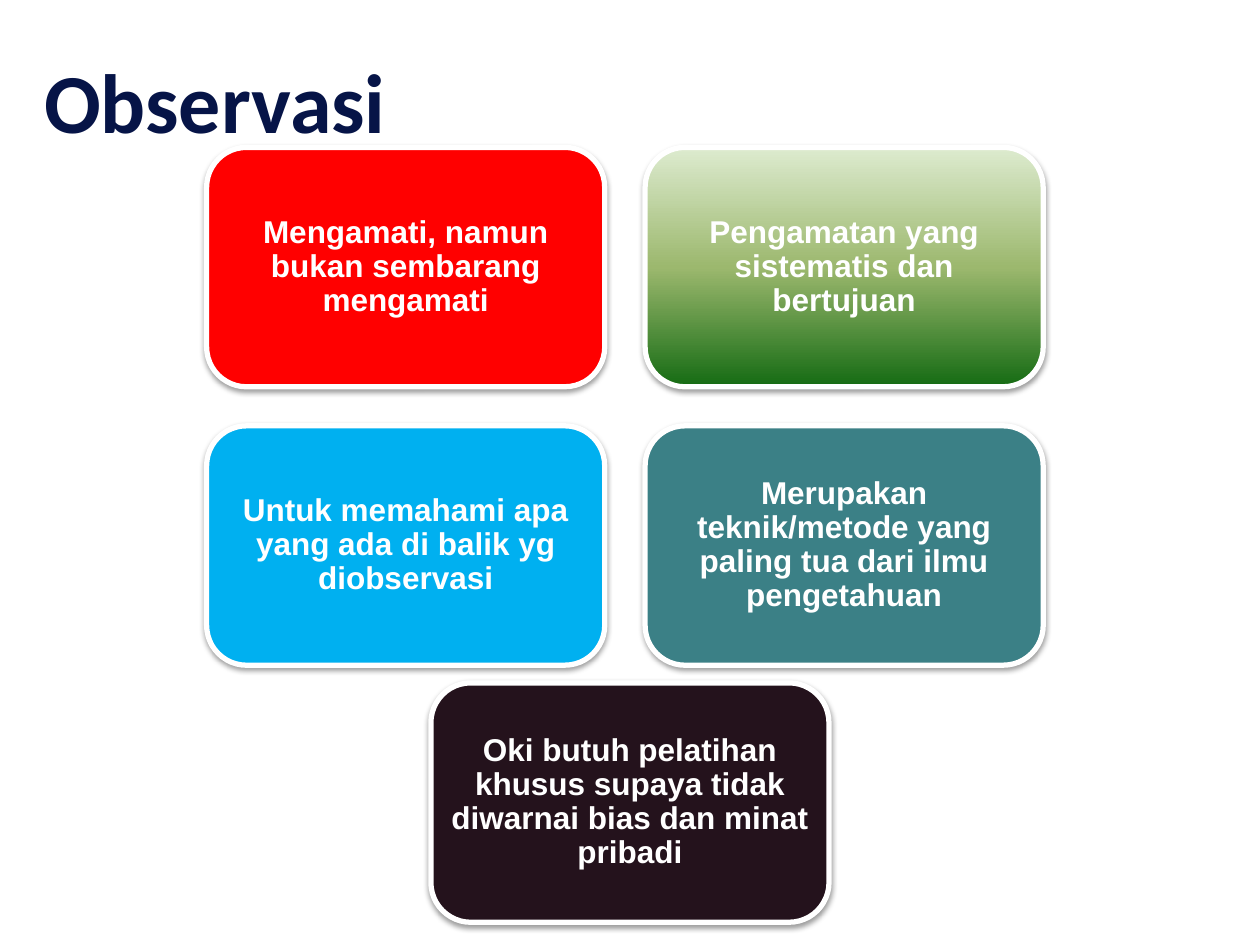
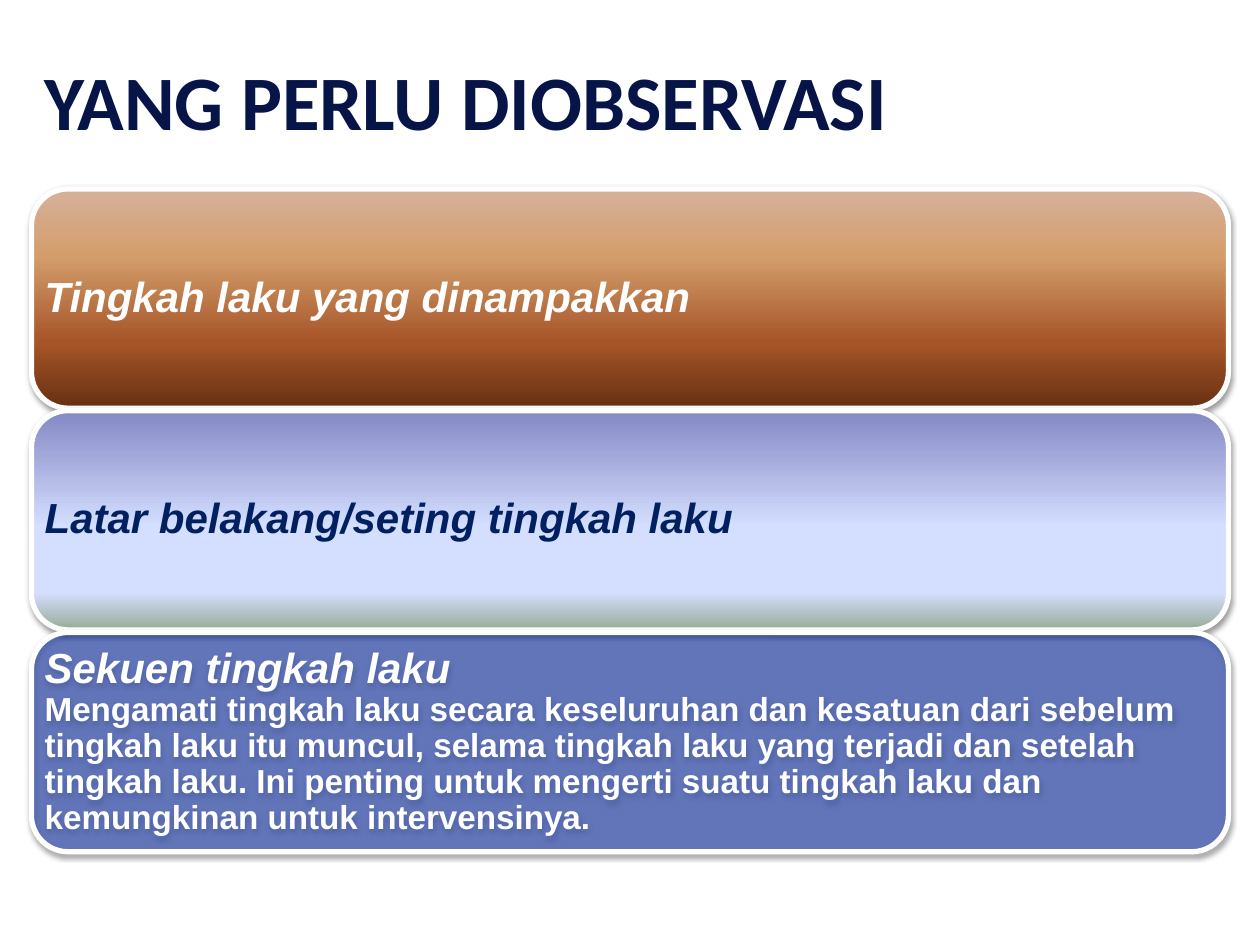
from lxml.etree import SubElement
from pptx import Presentation
from pptx.dml.color import RGBColor
from pptx.enum.shapes import MSO_SHAPE as SHAPE
from pptx.enum.text import MSO_ANCHOR as ANCHOR, MSO_AUTO_SIZE as AUTO, PP_ALIGN as ALIGN
from pptx.oxml.ns import qn
from pptx.util import Inches, Pt

C = {
    "navy": "061447", "white": "FFFFFF", "ink": "002060", "black": "000000",
    "red": "FF0000", "sky": "00B0F0", "teal": "3B8086", "plum": "24121C", "blue": "0E30AB",
}
GRADIENTS = {
    "green": [(0, "DDEBCF"), (50, "9CB86E"), (100, "156B13")],
    "copper": [(0, "D6B19C"), (30, "D49E6C"), (70, "A65528"), (100, "663012")],
    "mist": [(0, "8488C4"), (53, "D4DEFF"), (83, "D4DEFF"), (100, "96AB94")],
}
OPACITY = {"blue": 55}
TITLE = {"name": "Calibri", "bold": True}
LABEL = {"name": "Arial", "size": Pt(18), "bold": True}
HEADING = {"name": "Arial", "size": Pt(24), "bold": True, "italic": True}
DETAIL = {"name": "Arial", "size": Pt(19), "bold": True, "italic": False}


def add_run(p, text, font, color):
    r = p.add_run()
    r.text = text
    for key, value in font.items():
        setattr(r.font, key, value)
    r.font.color.rgb = RGBColor.from_string(C[color])


def add_card(s, box, fill, inset, align):
    sp = s.shapes.add_shape(SHAPE.ROUNDED_RECTANGLE, *map(Inches, box))
    sp.line.color.rgb = RGBColor.from_string(C["white"])
    sp.line.width = Pt(3)
    if fill in GRADIENTS:
        sp.fill.gradient()
        sp.fill.gradient_angle = 270
        stops = sp._element.spPr.find(".//" + qn("a:gsLst"))
        stops.clear()
        for pos, color in GRADIENTS[fill]:
            gs = SubElement(stops, qn("a:gs"), pos=str(pos * 1000))
            SubElement(gs, qn("a:srgbClr"), val=color)
    else:
        sp.fill.solid()
        sp.fill.fore_color.rgb = RGBColor.from_string(C[fill])
        if fill in OPACITY:
            clr = sp._element.spPr.find(qn("a:solidFill"))[0]
            SubElement(clr, qn("a:alpha"), val=str(OPACITY[fill] * 1000))
    sp.shadow.inherit = False
    effects = sp._element.spPr.find(qn("a:effectLst"))
    shadow = SubElement(effects, qn("a:outerShdw"), blurRad=str(Pt(3.1)), dist=str(Pt(1.6)),
                        dir="5400000", rotWithShape="0")
    clr = SubElement(shadow, qn("a:srgbClr"), val=C["black"])
    SubElement(clr, qn("a:alpha"), val="38000")
    tf = sp.text_frame
    tf.word_wrap = True
    tf.vertical_anchor = ANCHOR.MIDDLE
    for side in ("left", "right", "top", "bottom"):
        setattr(tf, f"margin_{side}", Inches(inset))
    p = tf.paragraphs[0]
    p.alignment = align
    p.line_spacing = 0.9
    return p


prs = Presentation()
prs.slide_width, prs.slide_height = Inches(10), Inches(7.5)

slides = []
for text, size in [("Observasi", 48), ("YANG PERLU DIOBSERVASI", 44)]:
    s = prs.slides.add_slide(prs.slide_layouts[5])
    title = s.shapes.title
    title.left, title.top, title.width, title.height = map(Inches, (0.25, 0.33, 9.08, 0.92))
    tf = title.text_frame
    tf.auto_size = AUTO.NONE
    tf.vertical_anchor = ANCHOR.MIDDLE
    p = tf.paragraphs[0]
    p.alignment = ALIGN.LEFT
    add_run(p, text, {**TITLE, "size": Pt(size)}, "navy")
    slides.append(s)
observation, targets = slides

traits = [
    ("Mengamati, namun bukan sembarang mengamati", "red"),
    ("Pengamatan yang sistematis dan bertujuan", "green"),
    ("Untuk memahami apa yang ada di balik yg diobservasi", "sky"),
    ("Merupakan teknik/metode yang paling tua dari ilmu pengetahuan", "teal"),
    ("Oki butuh pelatihan khusus supaya tidak diwarnai bias dan minat pribadi", "plum"),
]
places = [(x, y) for y in (1.17, 3.38) for x in (1.64, 5.12)] + [(3.42, 5.42)]
for (text, fill), place in zip(traits, places):
    p = add_card(observation, (*place, 3.16, 1.9), fill, 0.06, ALIGN.CENTER)
    add_run(p, text, LABEL, "white")

rows = [
    ("Tingkah laku yang dinampakkan", "copper", "white", ""),
    ("Latar belakang/seting tingkah laku", "mist", "ink", ""),
    ("Sekuen tingkah laku", "blue", "white",
     "Mengamati tingkah laku secara keseluruhan dan kesatuan dari sebelum tingkah laku itu "
     "muncul, selama tingkah laku yang terjadi dan setelah tingkah laku. Ini penting untuk "
     "mengerti suatu tingkah laku dan kemungkinan untuk intervensinya."),
]
for i, (heading, fill, color, detail) in enumerate(rows):
    p = add_card(targets, (0.25, 1.5 + 1.76 * i, 9.5, 1.74), fill, 0.02, ALIGN.LEFT)
    add_run(p, heading, HEADING, color)
    if detail:
        p.add_line_break()
        add_run(p, detail, DETAIL, color)

prs.save("out.pptx")
